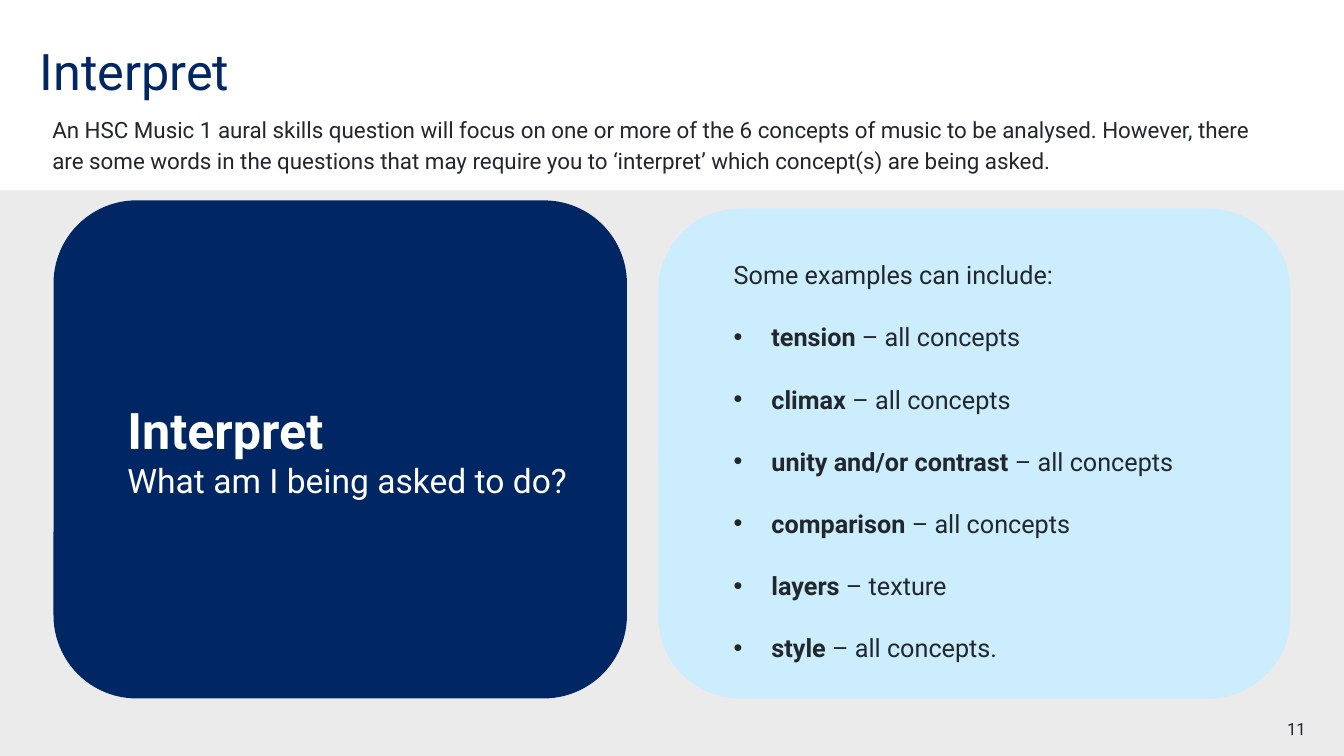
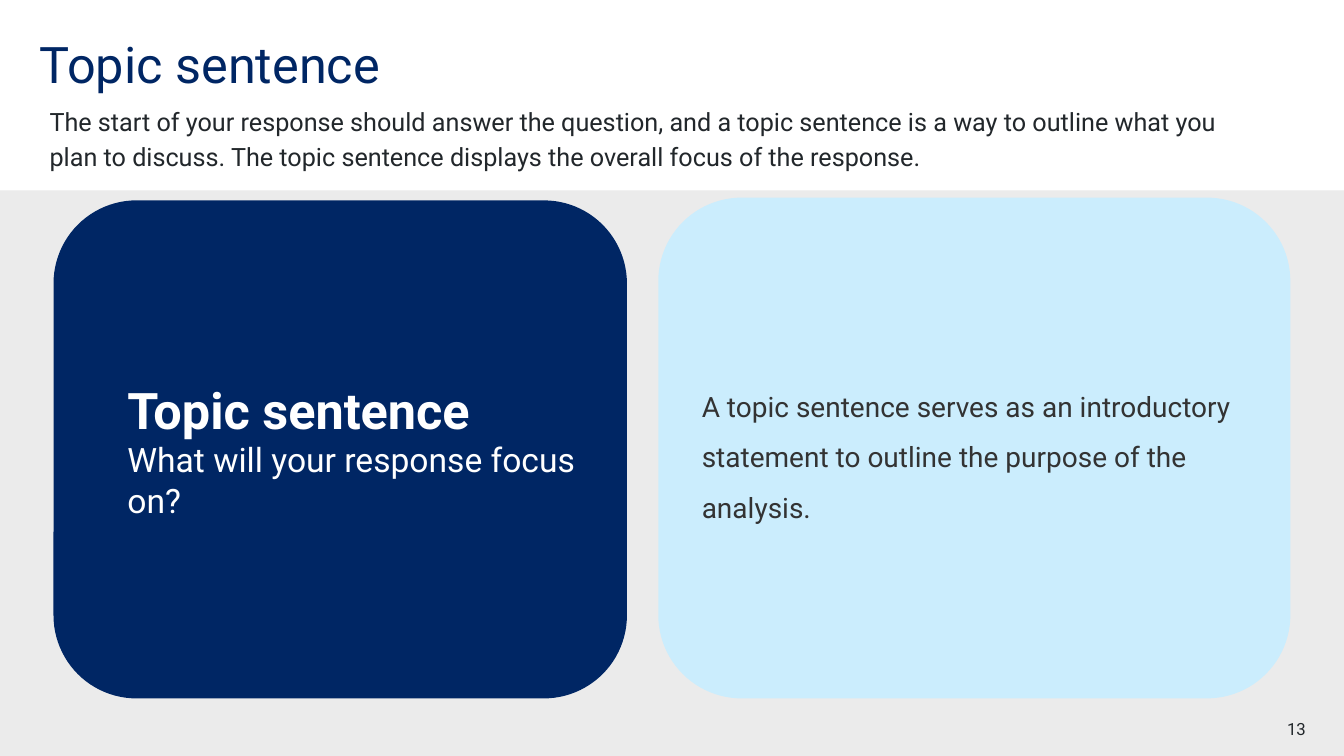
"""Builds two slides on interpreting questions and topic sentences."""
from lxml import etree
from pptx import Presentation
from pptx import util as u
from pptx.dml.color import RGBColor
from pptx.enum import shapes, text
from pptx.oxml.ns import qn

COLORS = {"navy": "002664", "sky": "CBEDFD", "grey": "EBEBEB",
          "white": "FFFFFF", "ink": "22272B", "soft": "333333"}
FONT = "Roboto"
PAGE_W, PAGE_H = 33.87, 19.05
BAND_TOP, PANEL_BOTTOM = 4.8, 17.6


class Deck:
    def __init__(self):
        self.prs = Presentation()
        self.prs.slide_width, self.prs.slide_height = u.Cm(PAGE_W), u.Cm(PAGE_H)

    def new_slide(self, title, number, spacing=1.0):
        self.s = self.prs.slides.add_slide(self.prs.slide_layouts[6])
        self.shape(shapes.MSO_SHAPE.RECTANGLE, (0, BAND_TOP, PAGE_W, PAGE_H - BAND_TOP), "grey")
        tf = self.textbox((1, 1, 28, 1.52), margin=0)
        self.para(tf, [(title, False)], 36, "navy", line_spacing=spacing)
        tf = self.textbox((30.91, 18.11, 2, 0.5), margin=0)
        self.para(tf, [(str(number), False)], 12, alignment=text.PP_ALIGN.RIGHT)

    def shape(self, kind, box, color):
        sp = self.s.shapes.add_shape(kind, *map(u.Cm, box))
        sp.shadow.inherit = False
        sp.fill.solid()
        sp.fill.fore_color.rgb = RGBColor.from_string(COLORS[color])
        sp.line.fill.background()
        return sp

    def textbox(self, box, margin=None):
        tf = self.s.shapes.add_textbox(*map(u.Cm, box)).text_frame
        tf.word_wrap = True
        if margin is not None:
            for side in ("left", "top", "right", "bottom"):
                setattr(tf, f"margin_{side}", u.Cm(margin))
        return tf

    def panel(self, left, top, width, color):
        box = (left, top, width, PANEL_BOTTOM - top)
        tf = self.shape(shapes.MSO_SHAPE.ROUNDED_RECTANGLE, box, color).text_frame
        tf.word_wrap = True
        tf.vertical_anchor = text.MSO_ANCHOR.MIDDLE
        return tf

    def para(self, tf, runs, size, color="ink", margin=0, indent=0, bullet=False, **fmt):
        p = tf.paragraphs[0]
        if p.runs:
            p = tf.add_paragraph()
        pPr = p._p.get_or_add_pPr()
        pPr.set("marL", str(u.Cm(margin)))
        pPr.set("indent", str(u.Cm(indent)))
        if bullet:
            etree.SubElement(pPr, qn("a:buFont")).set("typeface", "Arial")
            etree.SubElement(pPr, qn("a:buChar")).set("char", "•")
        for name, value in {"alignment": text.PP_ALIGN.LEFT, **fmt}.items():
            setattr(p, name, value)
        for words, bold in runs:
            r = p.add_run()
            r.text = words
            for name, value in {"name": FONT, "size": u.Pt(size), "bold": bold}.items():
                setattr(r.font, name, value)
            r.font.color.rgb = RGBColor.from_string(COLORS[color])

    def intro(self, box, words, size):
        self.para(self.textbox(box), [(words, False)], size, line_spacing=1.14)

    def prompt(self, heading, question):
        tf = self.panel(1.35, 5.05, 14.45, "navy")
        self.para(tf, [(heading, True)], 36, "white", margin=1)
        self.para(tf, [(question, False)], 24, "white", margin=1)

    def answer(self, top, paragraphs, size, color="ink", **layout):
        tf = self.panel(16.59, top, 15.93, "sky")
        for runs, bullet in paragraphs:
            self.para(tf, runs, size, color, bullet=bullet,
                      line_spacing=1.5, space_after=u.Pt(12), **layout)


def main():
    deck = Deck()

    deck.new_slide("Interpret", 11)
    deck.intro((1.07, 2.72, 31.06, 1.75),
               "An HSC Music 1 aural skills question will focus on one or more of the 6 "
               "concepts of music to be analysed. However, there are some words in the "
               "questions that may require you to ‘interpret’ which concept(s) are being "
               "asked.", 16)
    deck.prompt("Interpret", "What am I being asked to do?")
    examples = [("tension", "all concepts"), ("climax", "all concepts"),
                ("unity and/or contrast", "all concepts"), ("comparison", "all concepts"),
                ("layers", "texture"), ("style", "all concepts.")]
    bullets = [([(term, True), (f" – {concept}", False)], True) for term, concept in examples]
    deck.answer(5.26, [([("Some examples can include:", False)], False)] + bullets,
                18, margin=2, indent=-0.95)

    deck.new_slide("Topic sentence", 13, spacing=0.9)
    deck.intro((1, 2.46, 30.58, 1.93),
               "The start of your response should answer the question, and a topic sentence "
               "is a way to outline what you plan to discuss. The topic sentence displays "
               "the overall focus of the response.", 18)
    deck.prompt("Topic sentence", "What will your response focus on?")
    statement = ("A topic sentence serves as an introductory statement to outline the "
                 "purpose of the analysis.")
    deck.answer(4.98, [([(statement, False)], False)], 20, "soft", margin=0.23)

    deck.prs.save("out.pptx")


if __name__ == "__main__":
    main()
